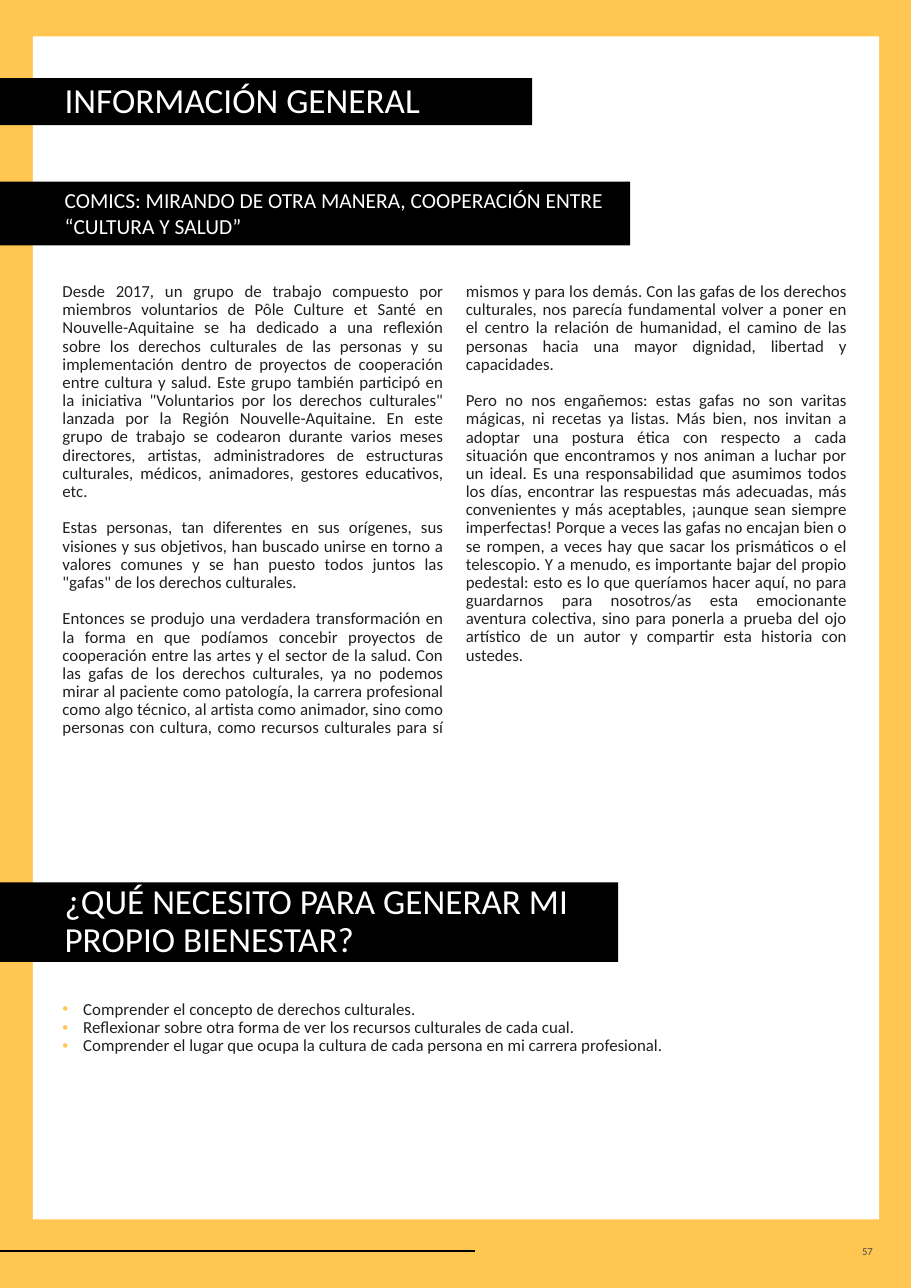
from lxml import etree
from pptx import Presentation
from pptx.dml.color import RGBColor
from pptx.enum import shapes, text
from pptx.oxml import ns
from pptx.util import Cm, Pt

YELLOW = RGBColor(0xFF, 0xC6, 0x52)
WHITE = RGBColor(0xFF, 0xFF, 0xFF)
BLACK = RGBColor(0x00, 0x00, 0x00)
INK = RGBColor(0x22, 0x1F, 0x1F)
GREY = RGBColor(0x4B, 0x4B, 0x4B)

MARGIN, TEXT_WIDTH = Cm(1.19), Cm(18.59)

prs = Presentation()
prs.slide_width, prs.slide_height = Cm(21), Cm(29.7)
page = prs.slides.add_slide(prs.slide_layouts[6])


def add_block(left, top, width, height, color):
    block = page.shapes.add_shape(shapes.MSO_SHAPE.RECTANGLE, left, top, width, height)
    block.shadow.inherit = False
    block.fill.solid()
    block.fill.fore_color.rgb = color
    block.line.fill.background()
    return block


def write(paragraph, words, size, color, align, spacing=0.9):
    paragraph.alignment = align
    paragraph.line_spacing = spacing
    run = paragraph.add_run()
    run.text = words
    run.font.name = "Calibri"
    run.font.size = Pt(size)
    run.font.color.rgb = color


# Yellow frame around the white sheet
add_block(0, 0, prs.slide_width, prs.slide_height, YELLOW)
add_block(Cm(0.76), Cm(0.84), Cm(19.51), Cm(27.28), WHITE)

# Footer rule and page number
footer_rule = page.shapes.add_connector(
    shapes.MSO_CONNECTOR.STRAIGHT, 0, Cm(28.85), Cm(10.95), Cm(28.85))
footer_rule.line.color.rgb = BLACK
footer_rule.line.width = Pt(1.5)
etree.SubElement(footer_rule._element.spPr, ns.qn("a:effectLst"))

page_number = page.shapes.add_textbox(Cm(17.63), Cm(28.65), Cm(2.74), Cm(0.41)).text_frame
page_number.word_wrap = True
page_number.vertical_anchor = text.MSO_ANCHOR.MIDDLE
page_number.margin_top = page_number.margin_bottom = 0
write(page_number.paragraphs[0], "57", 7, GREY, text.PP_ALIGN.RIGHT, 1.0)

# Black heading bars: top, width, height, size, line spacing, anchor, words
headings = [
    (1.8, 12.27, 1.09, 23, 0.9, text.MSO_ANCHOR.MIDDLE, "INFORMACIÓN GENERAL"),
    (4.19, 14.53, 1.47, 14, 1.0, text.MSO_ANCHOR.TOP,
     "COMICS: MIRANDO DE OTRA MANERA, COOPERACIÓN ENTRE “CULTURA Y SALUD”"),
    (20.35, 14.25, 1.83, 23, 0.9, text.MSO_ANCHOR.MIDDLE,
     "¿QUÉ NECESITO PARA GENERAR MI PROPIO BIENESTAR?"),
]
for top, width, height, size, spacing, anchor, words in headings:
    heading = add_block(0, Cm(top), Cm(width), Cm(height), BLACK).text_frame
    heading.word_wrap = True
    heading.vertical_anchor = anchor
    line = heading.paragraphs[0]
    line._p.get_or_add_pPr().set("marL", str(Cm(1.24)))
    write(line, words, size, WHITE, text.PP_ALIGN.LEFT, spacing)

# Two-column article
article_paragraphs = [
    "Desde 2017, un grupo de trabajo compuesto por miembros voluntarios de Pôle Culture et Santé "
    "en Nouvelle-Aquitaine se ha dedicado a una reflexión sobre los derechos culturales de las "
    "personas y su implementación dentro de proyectos de cooperación entre cultura y salud. Este "
    "grupo también participó en la iniciativa \"Voluntarios por los derechos culturales\" lanzada "
    "por la Región Nouvelle-Aquitaine. En este grupo de trabajo se codearon durante varios meses "
    "directores, artistas, administradores de estructuras culturales, médicos, animadores, "
    "gestores educativos, etc.",
    "Estas personas, tan diferentes en sus orígenes, sus visiones y sus objetivos, han buscado "
    "unirse en torno a valores comunes y se han puesto todos juntos las \"gafas\" de los derechos "
    "culturales.",
    "Entonces se produjo una verdadera transformación en la forma en que podíamos concebir "
    "proyectos de cooperación entre las artes y el sector de la salud. Con las gafas de los "
    "derechos culturales, ya no podemos mirar al paciente como patología, la carrera profesional "
    "como algo técnico, al artista como animador, sino como personas con cultura, como recursos "
    "culturales para sí mismos y para los demás. Con las gafas de los derechos culturales, nos "
    "parecía fundamental volver a poner en el centro la relación de humanidad, el camino de las "
    "personas hacia una mayor dignidad, libertad y capacidades.",
    "Pero no nos engañemos: estas gafas no son varitas mágicas, ni recetas ya listas. Más bien, "
    "nos invitan a adoptar una postura ética con respecto a cada situación que encontramos y nos "
    "animan a luchar por un ideal. Es una responsabilidad que asumimos todos los días, encontrar "
    "las respuestas más adecuadas, más convenientes y más aceptables, ¡aunque sean siempre "
    "imperfectas! Porque a veces las gafas no encajan bien o se rompen, a veces hay que sacar los "
    "prismáticos o el telescopio. Y a menudo, es importante bajar del propio pedestal: esto es lo "
    "que queríamos hacer aquí, no para guardarnos para nosotros/as esta emocionante aventura "
    "colectiva, sino para ponerla a prueba del ojo artístico de un autor y compartir esta historia "
    "con ustedes.",
]
article = page.shapes.add_textbox(MARGIN, Cm(6.4), TEXT_WIDTH, Cm(11.05)).text_frame
article.word_wrap = True
columns = article._txBody.bodyPr
columns.set("numCol", "2")
columns.set("spcCol", str(Cm(0.51)))
for i, words in enumerate(article_paragraphs):
    paragraph = article.add_paragraph() if i else article.paragraphs[0]
    if i:
        paragraph.space_before = Pt(12)
    write(paragraph, words, 11, INK, text.PP_ALIGN.JUSTIFY)

# Bulleted goals
goals = [
    "Comprender el concepto de derechos culturales.",
    "Reflexionar sobre otra forma de ver los recursos culturales de cada cual.",
    "Comprender el lugar que ocupa la cultura de cada persona en mi carrera profesional.",
]
goal_list = page.shapes.add_textbox(MARGIN, Cm(22.96), TEXT_WIDTH, Cm(1.83)).text_frame
goal_list.word_wrap = True
for i, words in enumerate(goals):
    goal = goal_list.add_paragraph() if i else goal_list.paragraphs[0]
    props = goal._p.get_or_add_pPr()
    props.set("marL", str(Cm(0.48)))
    props.set("indent", str(-Cm(0.48)))
    bullet_color = etree.SubElement(props, ns.qn("a:buClr"))
    etree.SubElement(bullet_color, ns.qn("a:srgbClr"), val=str(YELLOW))
    etree.SubElement(props, ns.qn("a:buFont"), typeface="Arial")
    etree.SubElement(props, ns.qn("a:buChar"), char="•")
    write(goal, words, 11, INK, text.PP_ALIGN.JUSTIFY)

prs.save("out.pptx")
